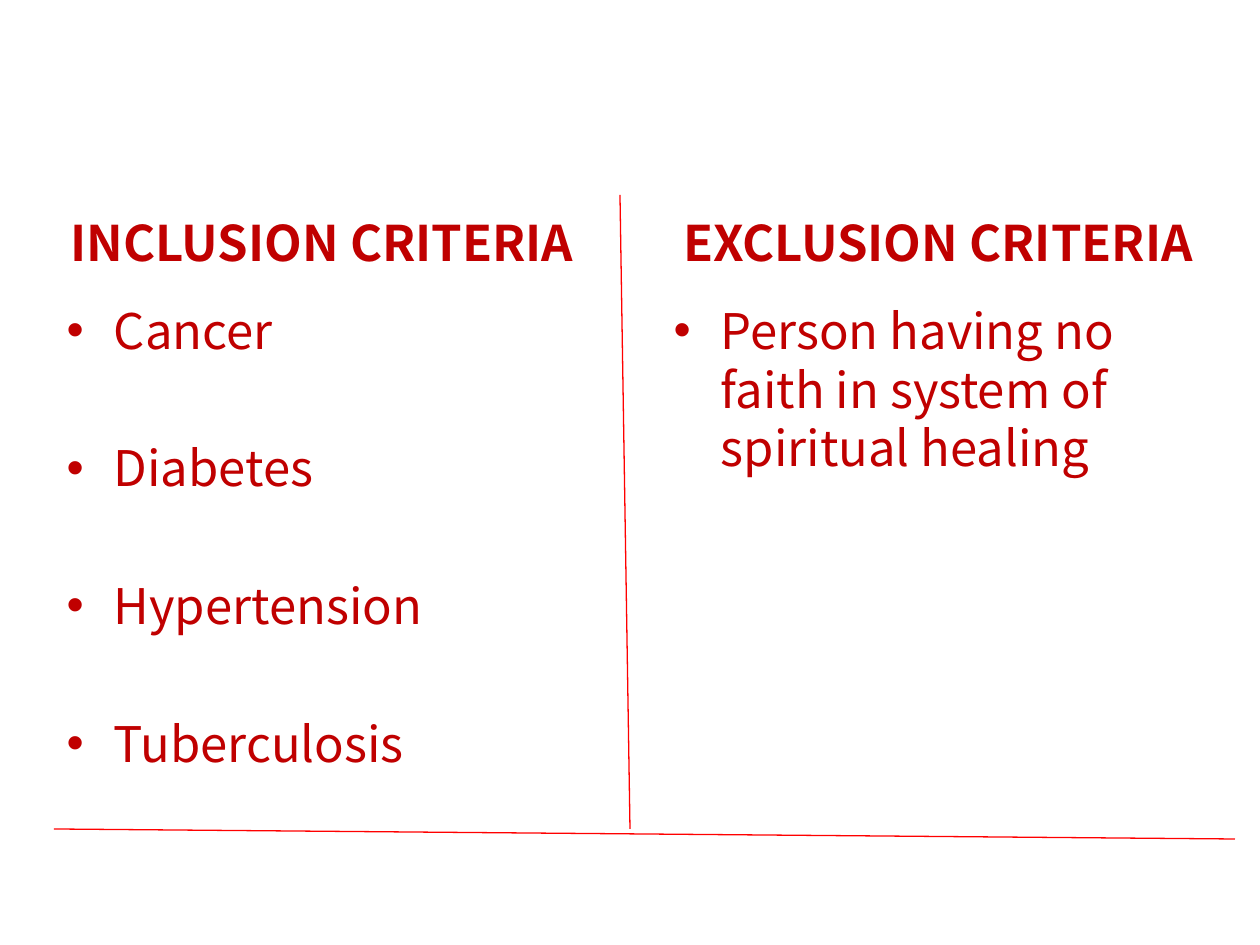
from pptx import Presentation
from pptx.dml.color import RGBColor
from pptx.enum.shapes import MSO_CONNECTOR
from pptx.enum.text import MSO_ANCHOR, MSO_AUTO_SIZE, PP_ALIGN
from pptx.oxml.ns import qn
from pptx.util import Emu, Pt
from lxml.etree import SubElement

DARK_RED = RGBColor(0xC0, 0x00, 0x00)
RULE_RED = RGBColor(0xFF, 0x00, 0x00)
FONT = "Noto Sans CJK SC"
PX_PER_INCH = 126
TWO_CONTENT = 3

HEADING_TOP, HEADING_SIZE = 189, (556, 105)
LIST_TOP, LIST_SIZE = 294, (557, 527)


def px(length):
    return Emu(round(length * 914400 / PX_PER_INCH))


def write_text(frame, lines, bold=False, align=None, anchor=None, gap=0):
    """Write one paragraph per line, with gap points between paragraphs."""
    frame.word_wrap = True
    frame.auto_size = MSO_AUTO_SIZE.NONE
    if anchor is not None:
        frame.vertical_anchor = anchor
    for index, line in enumerate(lines):
        paragraph = frame.add_paragraph() if index else frame.paragraphs[0]
        paragraph.alignment = align
        paragraph.space_before = Pt(gap if index else 0)
        run = paragraph.add_run()
        run.text = line
        run.font.name = FONT
        run.font.size = Pt(28)
        run.font.bold = bold
        run.font.color.rgb = DARK_RED


class CriteriaSlide:
    def __init__(self, deck):
        self.slide = deck.slides.add_slide(deck.slide_layouts[TWO_CONTENT])
        self.shapes = self.slide.shapes

    def place(self, shape, left, top, size):
        shape.left, shape.top = px(left), px(top)
        shape.width, shape.height = map(px, size)

    def heading(self, shape, text, left):
        self.place(shape, left, HEADING_TOP, HEADING_SIZE)
        write_text(shape.text_frame, [text], bold=True,
                   align=PP_ALIGN.CENTER, anchor=MSO_ANCHOR.MIDDLE)

    def text_box(self):
        return self.shapes.add_textbox(0, 0, 0, 0)

    def bullets(self, placeholder_index, items, left):
        body = self.slide.placeholders[placeholder_index]
        self.place(body, left, LIST_TOP, LIST_SIZE)
        write_text(body.text_frame, items, gap=45)

    def rule(self, start, end):
        line = self.shapes.add_connector(
            MSO_CONNECTOR.STRAIGHT, *map(px, start + end))
        line.line.color.rgb = RULE_RED
        line.line.width = Pt(0.75)
        SubElement(line._element.spPr, qn("a:effectLst"))


def main():
    deck = Presentation()
    deck.slide_width, deck.slide_height = px(1260), px(945)

    criteria = CriteriaSlide(deck)
    criteria.bullets(
        1, ["Cancer", "Diabetes", "Hypertension", "Tuberculosis"], left=54)
    criteria.bullets(
        2, ["Person having no faith in system of spiritual healing"], left=661)
    criteria.heading(criteria.shapes.title, "INCLUSION CRITERIA", left=44)
    criteria.heading(criteria.text_box(), "EXCLUSION CRITERIA", left=660)
    criteria.rule((620, 195), (630, 829))
    criteria.rule((54, 829), (1235, 839))

    deck.save("out.pptx")


if __name__ == "__main__":
    main()
